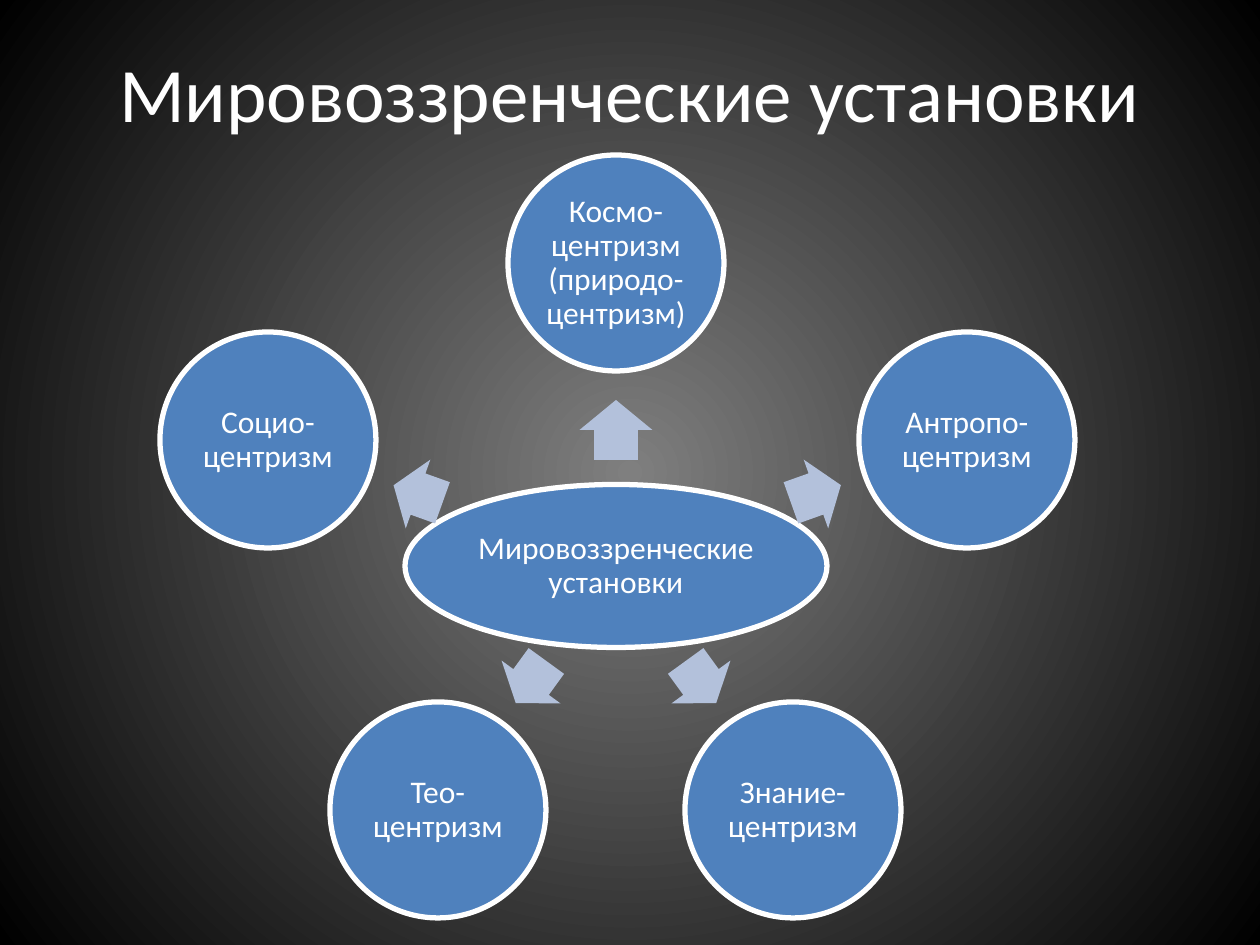
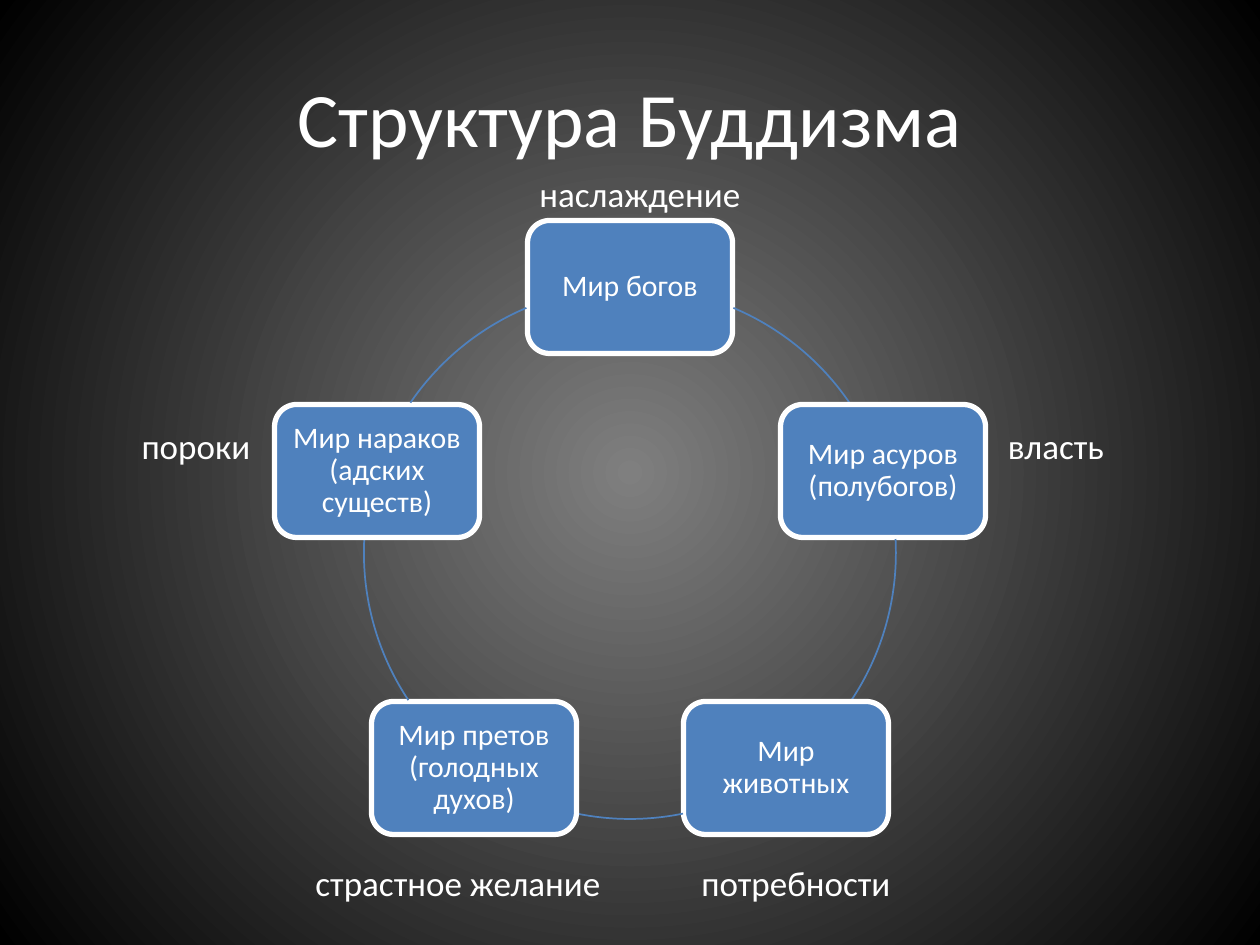
from dataclasses import dataclass
from math import cos, radians, sin

from lxml import etree
from pptx import Presentation
from pptx.dml.color import RGBColor
from pptx.enum.shapes import MSO_SHAPE
from pptx.enum.text import MSO_ANCHOR, MSO_AUTO_SIZE, PP_ALIGN
from pptx.oxml.ns import qn
from pptx.util import Emu, Pt

OVAL = MSO_SHAPE.OVAL
ROUNDED = MSO_SHAPE.ROUNDED_RECTANGLE
ARROW = MSO_SHAPE.RIGHT_ARROW
ARC = MSO_SHAPE.ARC
MIDDLE = MSO_ANCHOR.MIDDLE
CENTER = PP_ALIGN.CENTER
NO_FIT = MSO_AUTO_SIZE.NONE

FONT = "Calibri"
COLORS = {
    "glow": "7F7F7F",
    "edge": "000000",
    "text": "FFFFFF",
    "node": "4F81BD",
    "arrow": "B3C1DB",
}
PX_PER_INCH = 126
TITLE_ONLY = 5


@dataclass(frozen=True)
class Box:
    cx: int
    cy: int
    w: int
    h: int


@dataclass(frozen=True)
class Node:
    text: str
    box: Box


@dataclass(frozen=True)
class Arrow:
    box: Box
    angle: float


@dataclass(frozen=True)
class ArcSpan:
    start: float
    end: float


@dataclass(frozen=True)
class NodeStyle:
    shape: int
    size: int
    inset: int


CIRCLE = 216
CORE = Node("Мировоззренческие установки", Box(616, 566, 422, 163))
ATTITUDES = [
    Node("Космо-центризм (природо-центризм)", Box(616, 263, CIRCLE, CIRCLE)),
    Node("Антропо-центризм", Box(967, 440, CIRCLE, CIRCLE)),
    Node("Знание-центризм", Box(793, 810, CIRCLE, CIRCLE)),
    Node("Тео-центризм", Box(438, 810, CIRCLE, CIRCLE)),
    Node("Социо-центризм", Box(268, 440, CIRCLE, CIRCLE)),
]
ARROWS = [
    Arrow(Box(616, 430, 60, 73), 270),
    Arrow(Box(816, 494, 53, 73), 340.4),
    Arrow(Box(701, 682, 52, 73), 54),
    Arrow(Box(531, 682, 52, 73), 126),
    Arrow(Box(418, 494, 52, 73), 199.7),
]
ATTITUDE_STYLE = NodeStyle(OVAL, 18, 4)

RING = Box(630, 553, 532, 532)
WORLDS = [
    "Мир богов",
    "Мир асуров (полубогов)",
    "Мир животных",
    "Мир претов (голодных духов)",
    "Мир нараков (адских существ)",
]
ARCS = [
    ArcSpan(292.9, 325.6),
    ArcSpan(357, 33.6),
    ArcSpan(78.5, 101.5),
    ArcSpan(146.4, 183),
    ArcSpan(214.4, 247.1),
]
WORLD_STYLE = NodeStyle(ROUNDED, 17, 9)
LABELS = [
    Node("наслаждение", Box(640, 193, 280, 56)),
    Node("власть", Box(1056, 445, 160, 56)),
    Node("потребности", Box(796, 882, 260, 56)),
    Node("страстное желание", Box(458, 882, 360, 56)),
    Node("пороки", Box(196, 445, 160, 56)),
]


def px(n: float) -> Emu:
    return Emu(round(n * 914400 / PX_PER_INCH))


def rgb(name: str) -> RGBColor:
    return RGBColor.from_string(COLORS[name])


def frame(box: Box) -> tuple:
    return (px(box.cx - box.w / 2), px(box.cy - box.h / 2), px(box.w), px(box.h))


def set_background(master) -> None:
    fill = master.background.fill
    fill.gradient()
    for stop, name in zip(fill.gradient_stops, ("glow", "edge")):
        stop.color.rgb = rgb(name)
    grad = master.element.find(".//" + qn("a:gradFill"))
    grad.remove(grad.find(qn("a:lin")))
    circle = etree.SubElement(grad, qn("a:path"))
    circle.set("path", "circle")
    center = etree.SubElement(circle, qn("a:fillToRect"))
    for side in "ltrb":
        center.set(side, "50000")


def write(tf, text: str, size: int, spacing: float = 1.0) -> None:
    tf.word_wrap = True
    tf.auto_size = NO_FIT
    tf.vertical_anchor = MIDDLE
    p = tf.paragraphs[0]
    p.alignment = CENTER
    p.line_spacing = spacing
    r = p.add_run()
    r.text = text
    r.font.name = FONT
    r.font.size = Pt(size)
    r.font.color.rgb = rgb("text")


def add_titled_slide(prs, title: str, title_height: int):
    s = prs.slides.add_slide(prs.slide_layouts[TITLE_ONLY])
    sp = s.shapes.title
    sp.left, sp.top, sp.width, sp.height = px(63), px(38), px(1134), px(title_height)
    write(sp.text_frame, title, 44)
    return s


def add_node(s, node: Node, style: NodeStyle) -> None:
    sp = s.shapes.add_shape(style.shape, *frame(node.box))
    sp.shadow.inherit = False
    sp.fill.solid()
    sp.fill.fore_color.rgb = rgb("node")
    sp.line.color.rgb = rgb("text")
    sp.line.width = Pt(3)
    tf = sp.text_frame
    tf.margin_left = tf.margin_right = px(style.inset)
    tf.margin_top = tf.margin_bottom = px(style.inset)
    write(tf, node.text, style.size, 0.9)


def add_arrow(s, arrow: Arrow) -> None:
    sp = s.shapes.add_shape(ARROW, *frame(arrow.box))
    sp.shadow.inherit = False
    sp.adjustments[0] = 0.6
    sp.adjustments[1] = 0.5
    sp.rotation = arrow.angle
    sp.fill.solid()
    sp.fill.fore_color.rgb = rgb("arrow")
    sp.line.fill.background()


def add_arc(s, span: ArcSpan) -> None:
    sp = s.shapes.add_shape(ARC, *frame(RING))
    sp.shadow.inherit = False
    sp.adjustments[0] = span.start * 0.6
    sp.adjustments[1] = span.end * 0.6
    sp.fill.background()
    sp.line.color.rgb = rgb("node")
    sp.line.width = Pt(1)


def add_label(s, label: Node) -> None:
    sp = s.shapes.add_textbox(*frame(label.box))
    write(sp.text_frame, label.text, 20)


def ring_box(i: int) -> Box:
    angle = radians(360 / len(WORLDS) * i - 90)
    radius = RING.w / 2
    return Box(
        round(RING.cx + radius * cos(angle)),
        round(RING.cy + radius * sin(angle)),
        205,
        133,
    )


def build_attitudes(prs) -> None:
    s = add_titled_slide(prs, "Мировоззренческие установки", 107)
    add_node(s, CORE, ATTITUDE_STYLE)
    for arrow, node in zip(ARROWS, ATTITUDES):
        add_arrow(s, arrow)
        add_node(s, node, ATTITUDE_STYLE)


def build_worlds(prs) -> None:
    s = add_titled_slide(prs, "Структура Буддизма", 158)
    for i, (world, span) in enumerate(zip(WORLDS, ARCS)):
        add_node(s, Node(world, ring_box(i)), WORLD_STYLE)
        add_arc(s, span)
    for label in LABELS:
        add_label(s, label)


def main() -> None:
    prs = Presentation()
    prs.slide_width, prs.slide_height = px(1260), px(945)
    set_background(prs.slide_master)
    build_attitudes(prs)
    build_worlds(prs)
    prs.save("out.pptx")


if __name__ == "__main__":
    main()
